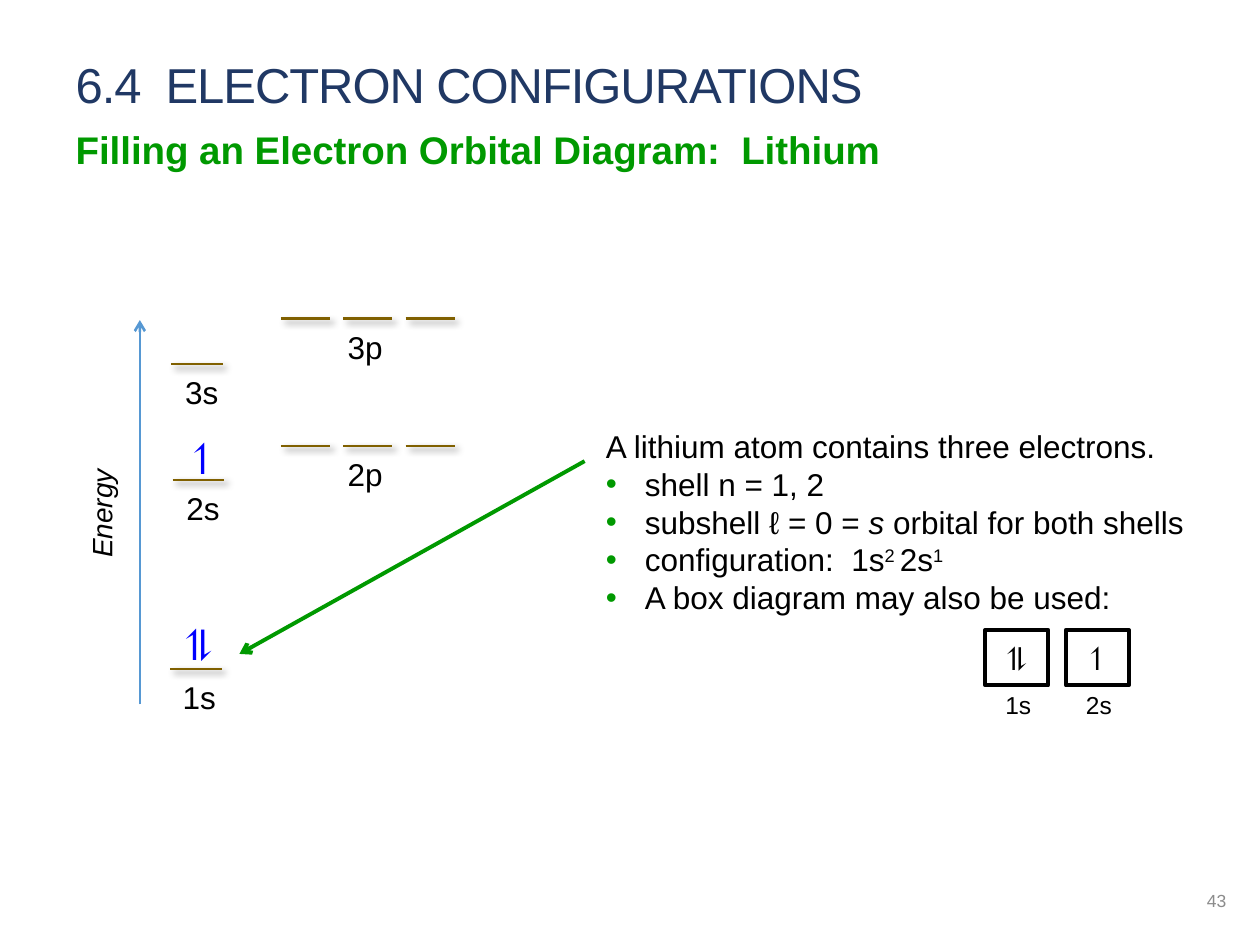
import pptx
import pptx.util
import pptx.dml.color
import pptx.enum.shapes
import pptx.enum.text
import pptx.oxml
import pptx.oxml.ns

Inches, Pt = pptx.util.Inches, pptx.util.Pt
ALIGN = pptx.enum.text.PP_ALIGN
ANCHOR = pptx.enum.text.MSO_ANCHOR

BLACK, BLUE, GREEN, BROWN = "000000", "0000FF", "009900", "806000"
TITLE = "6.4  ELECTRON CONFIGURATIONS"
SUBTITLE = "Filling an Electron Orbital Diagram:  Lithium"
LEVELS = [
    ("3p", 2.23, 2.53, 3, 0.39, 2.66),
    ("3s", 1.36, 2.89, 1, 0.41, 1.37),
    ("2p", 2.23, 3.54, 3, 0.39, 2.66),
    ("2s", 1.37, 3.81, 1, 0.41, 1.38),
    ("1s", 1.35, 5.31, 1, 0.41, 1.35),
]
LEVEL_STEP = 0.495
ELECTRONS = [("⥮", 1.34, 4.86, 0.44), ("↿", 1.37, 3.38, 0.35)]
BOXES = [("1s", "⥮"), ("2s", "↿")]
NOTES = [
    [("A lithium atom contains three electrons.", "")],
    [("shell n = 1, 2", "")],
    [("subshell ℓ = 0 = ", ""), ("s", "italic"), (" orbital for both shells", "")],
    [("configuration:  1s", ""), ("2 ", "super"), ("2s", ""), ("1", "super")],
    [("A box diagram may also be used:", "")],
]


def color(value):
    return pptx.dml.color.RGBColor.from_string(value)


def add_xml(parent, content):
    namespaces = pptx.oxml.ns.nsdecls("a")
    root = pptx.oxml.parse_xml(f"<a:root {namespaces}>{content}</a:root>")
    for element in list(root):
        parent.append(element)


def style(para, size, fill, name="Arial", bold=False, italic=False):
    font = para.font
    font.size, font.name = Pt(size), name
    font.bold, font.italic = bold, italic
    font.color.rgb = color(fill)


def place(shape, left, top, width, height):
    shape.left, shape.top = Inches(left), Inches(top)
    shape.width, shape.height = Inches(width), Inches(height)


def add_label(page, text, area, size, fill=BLACK, align=ALIGN.LEFT, wrap=True, **font):
    box = page.shapes.add_textbox(*map(Inches, area))
    box.text_frame.word_wrap = wrap
    para = box.text_frame.paragraphs[0]
    para.text, para.alignment = text, align
    style(para, size, fill, **font)
    return box


def add_line(page, start, end, fill, width, arrow=False, shadow=False):
    line = page.shapes.add_connector(
        pptx.enum.shapes.MSO_CONNECTOR.STRAIGHT, *map(Inches, start + end))
    line.line.color.rgb = color(fill)
    line.line.width = Pt(width)
    if arrow:
        add_xml(line.line._get_or_add_ln(), '<a:tailEnd type="arrow"/>')
    effect = ""
    if shadow:
        effect = ('<a:outerShdw blurRad="50800" dist="38100" dir="2700000" algn="tl" rotWithShape="0">'
                  '<a:srgbClr val="000000"><a:alpha val="40000"/></a:srgbClr></a:outerShdw>')
    add_xml(line._element.spPr, f"<a:effectLst>{effect}</a:effectLst>")


def add_headings(page):
    title, body = page.placeholders
    place(title, 0.5, 0.38, 9.33, 0.57)
    place(body, 0.5, 0.95, 9.33, 4.16)
    title.text_frame.vertical_anchor = ANCHOR.BOTTOM
    para = title.text_frame.paragraphs[0]
    para.text, para.alignment = TITLE, ALIGN.LEFT
    style(para, 28, "203864")
    para.runs[0]._r.get_or_add_rPr().set("spc", "-60")
    para = body.text_frame.paragraphs[0]
    para.text = SUBTITLE
    para.space_before, para.space_after = Pt(0), Pt(6)
    properties = para._p.get_or_add_pPr()
    properties.set("marL", "0")
    properties.set("indent", "0")
    add_xml(properties, "<a:buNone/>")
    style(para, 22, GREEN, bold=True)


def add_energy_diagram(page):
    for name, left, top, count, width, label_left in LEVELS:
        for index in range(count):
            start = left + index * LEVEL_STEP
            add_line(page, (start, top), (start + width, top), BROWN, 1.5, shadow=True)
        add_label(page, name, (label_left, top + 0.02, 0.52, 0.52), 18)
    for arrows, left, top, width in ELECTRONS:
        add_label(page, arrows, (left, top, width, 0.5), 24, BLUE, ALIGN.CENTER, False, name="Cambria")
    axis = add_label(page, "Energy", (0.35, 3.89, 0.91, 0.37), 16,
                     align=ALIGN.CENTER, wrap=False, italic=True)
    axis.rotation = 270
    add_line(page, (1.11, 5.59), (1.11, 2.54), "5698D3", 1.5, arrow=True)
    add_line(page, (4.64, 3.66), (1.9, 5.19), GREEN, 2.25, arrow=True)


def add_notes(page):
    box = page.shapes.add_textbox(*map(Inches, (4.71, 3.34, 5, 1.62)))
    frame = box.text_frame
    frame.word_wrap = True
    for index, parts in enumerate(NOTES):
        para = frame.add_paragraph() if index else frame.paragraphs[0]
        if index:
            properties = para._p.get_or_add_pPr()
            properties.set("marL", str(Inches(0.31)))
            properties.set("indent", str(-Inches(0.31)))
            add_xml(properties, f'<a:buClr><a:srgbClr val="{GREEN}"/></a:buClr>'
                                '<a:buFont typeface="Arial"/><a:buChar char="•"/>')
        style(para, 18, BLACK)
        for text, kind in parts:
            span = para.add_run()
            span.text = text
            if kind == "italic":
                span.font.italic = True
            elif kind == "super":
                span._r.get_or_add_rPr().set("baseline", "30000")


def add_box_diagram(page):
    for index, (name, arrows) in enumerate(BOXES):
        left = 7.82 + index * 0.64
        box = page.shapes.add_shape(
            pptx.enum.shapes.MSO_SHAPE.RECTANGLE, *map(Inches, (left, 5, 0.5, 0.44)))
        box.shadow.inherit = False
        box.fill.background()
        box.line.color.rgb = color(BLACK)
        box.line.width = Pt(2.25)
        box.text_frame.vertical_anchor = ANCHOR.MIDDLE
        para = box.text_frame.paragraphs[0]
        para.text, para.alignment = arrows, ALIGN.CENTER
        style(para, 18, BLACK, name="Cambria")
        add_label(page, name, (left + 0.06, 5.43, 0.41, 0.34), 14, wrap=False)


def main():
    deck = pptx.Presentation()
    deck.slide_width, deck.slide_height = Inches(10), Inches(7.5)
    page = deck.slides.add_slide(deck.slide_layouts[1])
    add_headings(page)
    add_energy_diagram(page)
    add_notes(page)
    add_box_diagram(page)
    number = add_label(page, "43", (7.58, 6.95, 2.25, 0.4), 10, "8C8C8C", ALIGN.RIGHT)
    number.text_frame.vertical_anchor = ANCHOR.MIDDLE
    deck.save("out.pptx")


if __name__ == "__main__":
    main()
